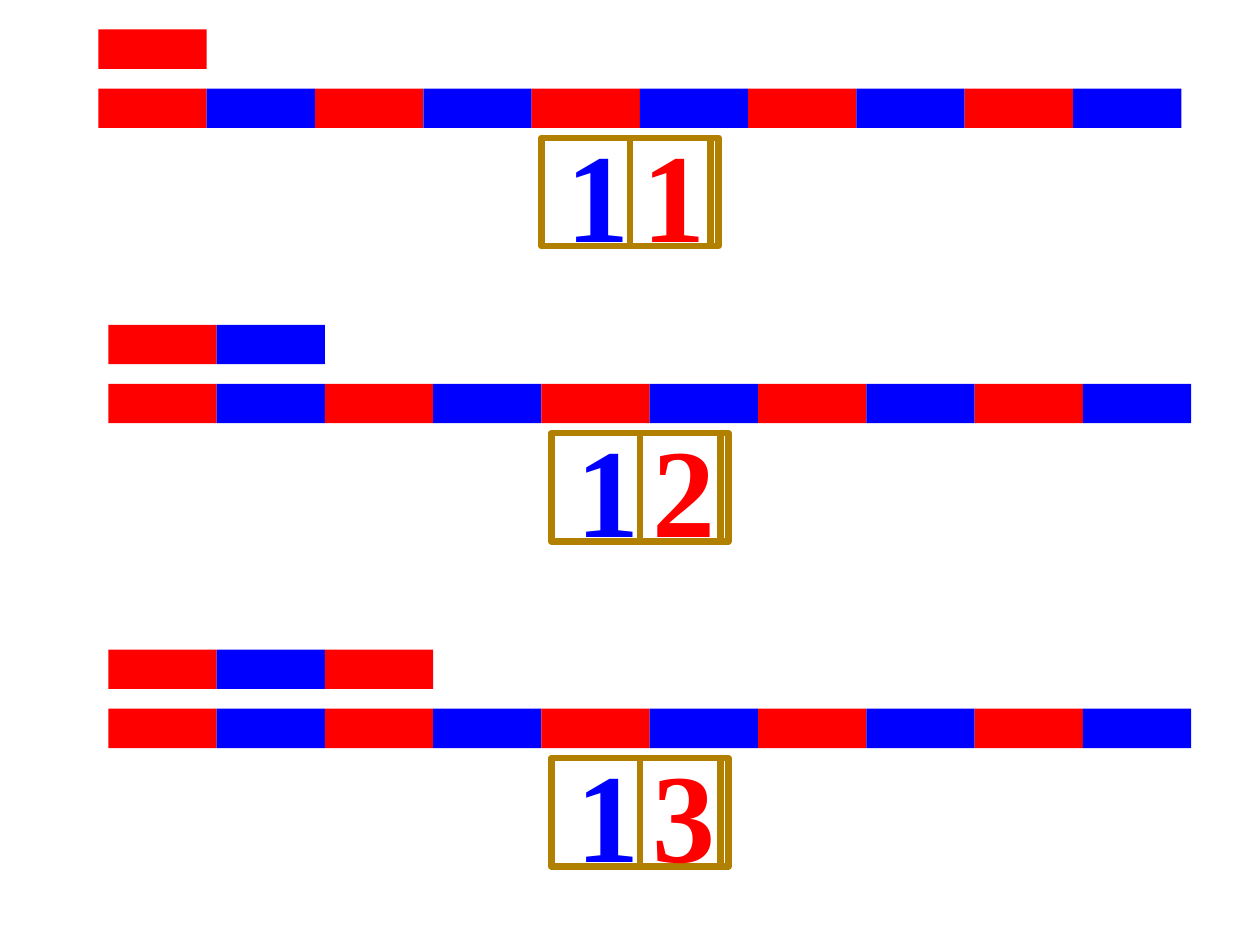
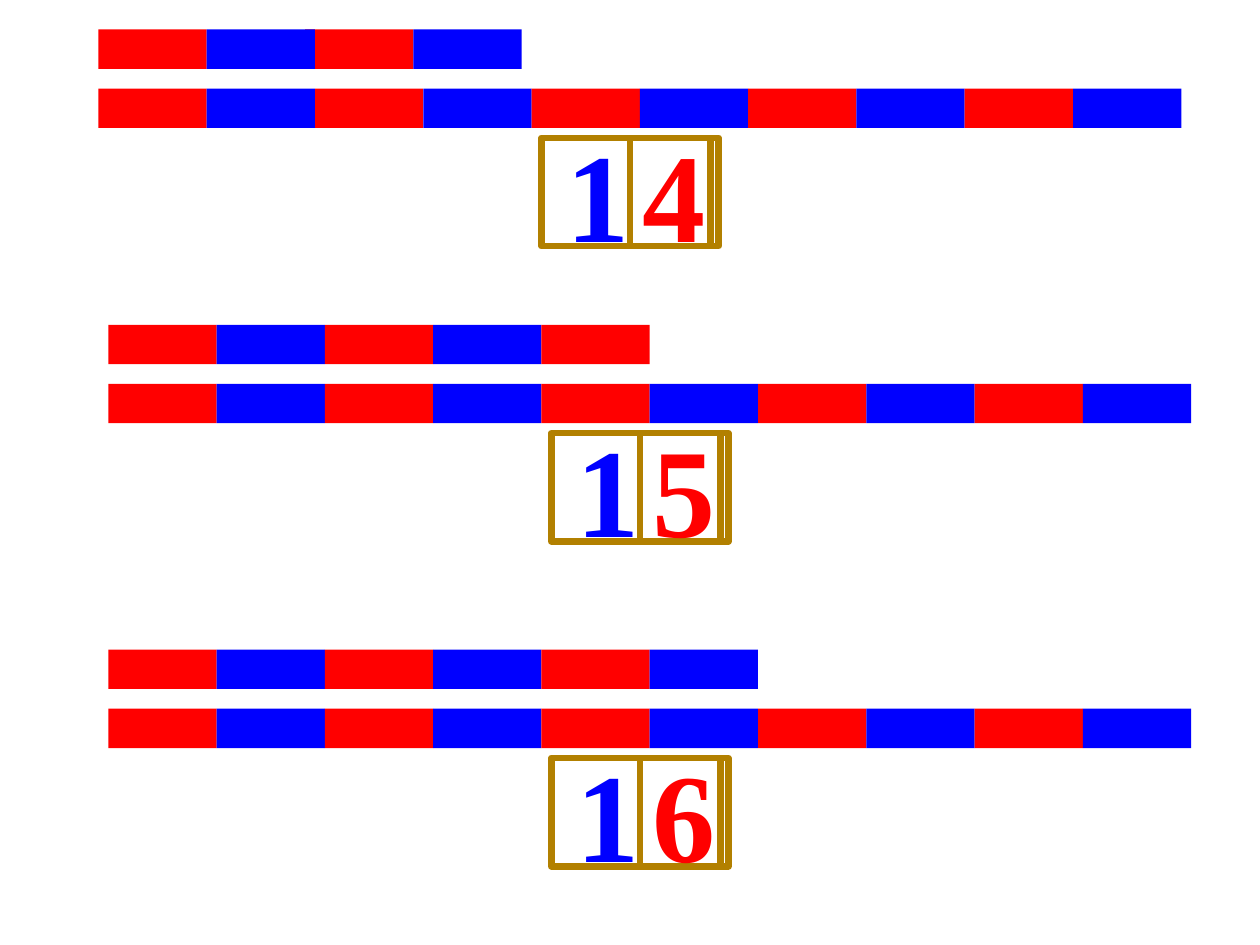
from pptx import Presentation
from pptx.dml.color import RGBColor
from pptx.enum.shapes import MSO_SHAPE
from pptx.enum.text import MSO_ANCHOR, PP_ALIGN
from pptx.util import Pt

RECTANGLE = MSO_SHAPE.RECTANGLE
MIDDLE = MSO_ANCHOR.MIDDLE
CENTER = PP_ALIGN.CENTER

RED = RGBColor(0xFF, 0x00, 0x00)
BLUE = RGBColor(0x00, 0x00, 0xFF)
WHITE = RGBColor(0xFF, 0xFF, 0xFF)
GOLD = RGBColor(0xB2, 0x80, 0x00)
FONT = "Times New Roman"

SEGMENT_WIDTH = 61.88
SEGMENT_HEIGHT = 22.5
CARD_HEIGHT = 61.88
TENS_BAR_OFFSET = 33.75
CARD_OFFSET = 61.88
PAIR_OVERLAP = 5.62
ROWS = [(56.25, 16.88), (61.88, 185.62), (61.88, 371.25)]
SLIDE_UNITS = [(1, 2, 3), (4, 5, 6)]


def add_rectangle(shapes, left, top, width, height, fill):
    shape = shapes.add_shape(RECTANGLE, Pt(left), Pt(top), Pt(width), Pt(height))
    shape.shadow.inherit = False
    shape.fill.solid()
    shape.fill.fore_color.rgb = fill
    shape.line.fill.background()
    return shape


def add_number_card(text, *, shapes, left, top, width, color):
    card = add_rectangle(shapes, left, top, width, CARD_HEIGHT, WHITE)
    card.line.color.rgb = GOLD
    card.line.width = Pt(3.78)
    card.text_frame.word_wrap = True
    card.text_frame.vertical_anchor = MIDDLE
    paragraph = card.text_frame.paragraphs[0]
    paragraph.alignment = CENTER
    run = paragraph.add_run()
    run.text = text
    run.font.name = FONT
    run.font.size = Pt(72)
    run.font.bold = True
    run.font.color.rgb = color


presentation = Presentation()
presentation.slide_width = Pt(720)
presentation.slide_height = Pt(540)

for slide_units in SLIDE_UNITS:
    slide = presentation.slides.add_slide(presentation.slide_layouts[6])
    for (left, top), units in zip(ROWS, slide_units):
        for count, bar_top in [(10, top + TENS_BAR_OFFSET), (units, top)]:
            bar = slide.shapes.add_group_shape()
            order = [2, 3, 0, 1] if count == 4 else range(count)
            for index in order:
                overlap = PAIR_OVERLAP if count == 4 and index >= 2 else 0
                add_rectangle(
                    bar.shapes,
                    left + index * SEGMENT_WIDTH - overlap,
                    bar_top,
                    SEGMENT_WIDTH,
                    SEGMENT_HEIGHT,
                    BLUE if index % 2 else RED,
                )
        for text, offset, width, color in [
            ("10", 253.12, 101.25, BLUE),
            (str(units), 303.75, 46.12, RED),
        ]:
            add_number_card(
                text,
                shapes=slide.shapes,
                left=left + offset,
                top=top + CARD_OFFSET,
                width=width,
                color=color,
            )

presentation.save("out.pptx")
